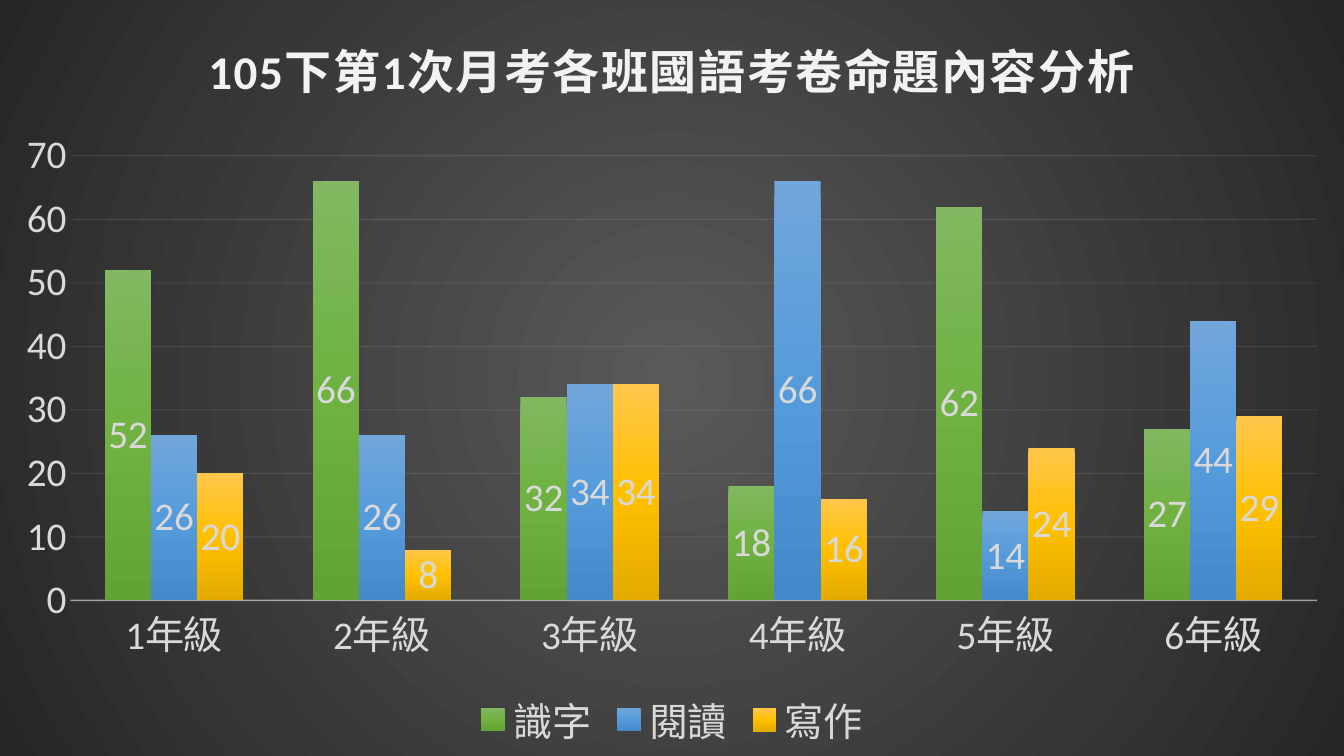
"""Build a slide with a column chart of exam content by school grade."""
from lxml.etree import SubElement
from pptx import Presentation
from pptx.chart.data import CategoryChartData
from pptx.dml.color import RGBColor
from pptx.enum.chart import XL_CHART_TYPE as ChartType
from pptx.enum.chart import XL_LABEL_POSITION as LabelPosition
from pptx.enum.chart import XL_LEGEND_POSITION as LegendPosition
from pptx.enum.chart import XL_TICK_MARK as TickMark
from pptx.oxml import parse_xml
from pptx.oxml.ns import nsdecls, qn
from pptx.util import Inches, Pt

TITLE = "105下第1次月考各班國語考卷命題內容分析"
GRADES = [f"{grade}年級" for grade in range(1, 7)]
FONT = "Calibri"
TEXT_GRAY = RGBColor(0xD9, 0xD9, 0xD9)
LIGHT_GRAY = RGBColor(0xF2, 0xF2, 0xF2)
BACKDROP = (RGBColor(0x59, 0x59, 0x59), RGBColor(0x26, 0x26, 0x26))
GREENS = (RGBColor(0x81, 0xB8, 0x61), RGBColor(0x6F, 0xB2, 0x42), RGBColor(0x62, 0xA3, 0x36))
BLUES = (RGBColor(0x71, 0xA6, 0xDB), RGBColor(0x55, 0x9B, 0xDB), RGBColor(0x44, 0x8A, 0xCA))
GOLDS = (RGBColor(0xFF, 0xC6, 0x4B), RGBColor(0xFF, 0xC0, 0x00), RGBColor(0xE3, 0xAB, 0x00))
SKILLS = [
    ("識字", (52, 66, 32, 18, 62, 27), GREENS),
    ("閱讀", (26, 26, 34, 66, 14, 44), BLUES),
    ("寫作", (20, 8, 34, 16, 24, 29), GOLDS),
]
DOWNWARD = '<a:lin ang="5400000" scaled="0"/>'
CIRCULAR = '<a:path path="circle"><a:fillToRect l="50000" t="50000" r="50000" b="50000"/></a:path>'


def gradient(colors, direction):
    """Return the XML of a gradient with evenly spaced stops."""
    step = 100000 // (len(colors) - 1)
    stops = "".join(
        f'<a:gs pos="{index * step}"><a:srgbClr val="{color}"/></a:gs>'
        for index, color in enumerate(colors)
    )
    return f'<a:gradFill {nsdecls("a")} rotWithShape="1"><a:gsLst>{stops}</a:gsLst>{direction}</a:gradFill>'


def style_font(font, size=28, color=TEXT_GRAY, bold=False):
    """Set the typeface, size, colour and weight of a font."""
    font.name = FONT
    font.size = Pt(size)
    font.bold = bold
    font.color.rgb = color


def style_line(owner, width, opacity):
    """Draw a light, partly transparent line on an axis or its gridlines."""
    line = owner.format.line
    line.width = Pt(width)
    line.color.rgb = LIGHT_GRAY
    color = line._get_or_add_ln().find(".//" + qn("a:srgbClr"))
    SubElement(color, qn("a:alpha"), val=str(opacity * 1000))


def style_title(chart):
    """Write the chart title in spaced bold type."""
    chart.has_title = True
    chart.chart_title.include_in_layout = False
    para = chart.chart_title.text_frame.paragraphs[0]
    para.text = TITLE
    span = para.runs[0]
    style_font(span.font, 33.6, LIGHT_GRAY, True)
    span.font._element.set("spc", "100")


def style_axes(chart):
    """Format both axes and the gridlines."""
    for axis in (chart.category_axis, chart.value_axis):
        axis.major_tick_mark = TickMark.NONE
        axis.minor_tick_mark = TickMark.NONE
        style_font(axis.tick_labels.font)
    style_line(chart.category_axis, 1, 54)
    values = chart.value_axis
    values.minimum_scale, values.maximum_scale, values.major_unit = 0, 70, 10
    values.format.line.fill.background()
    style_line(values.major_gridlines, 0.75, 10)


def style_series(series, colors):
    """Fill the columns of one skill and label their values."""
    series._element.get_or_add_spPr().insert(0, parse_xml(gradient(colors, DOWNWARD)))
    labels = series.data_labels
    labels.show_value = True
    labels.position = LabelPosition.CENTER
    style_font(labels.font)


def style_backdrop(chart):
    """Give the whole chart area a circular gradient without a border."""
    fill = gradient(BACKDROP, CIRCULAR)
    area = f'<c:spPr {nsdecls("c", "a")}>{fill}<a:ln><a:noFill/></a:ln></c:spPr>'
    chart._chartSpace.find(qn("c:chart")).addnext(parse_xml(area))


def add_exam_chart(page, width, height):
    """Add the clustered column chart over the whole page."""
    data = CategoryChartData()
    data.categories = GRADES
    for name, values, _ in SKILLS:
        data.add_series(name, values)
    frame = page.shapes.add_chart(
        ChartType.COLUMN_CLUSTERED, Inches(0), Inches(0), width, height, data
    )
    chart = frame.chart
    style_font(chart.font)
    style_title(chart)
    style_axes(chart)
    plot = chart.plots[0]
    plot.gap_width, plot.overlap, plot.vary_by_categories = 150, 0, False
    for series, (_, _, colors) in zip(plot.series, SKILLS):
        style_series(series, colors)
    chart.has_legend = True
    chart.legend.position = LegendPosition.BOTTOM
    chart.legend.include_in_layout = False
    style_font(chart.legend.font)
    style_backdrop(chart)


def main():
    """Create the deck and save it."""
    deck = Presentation()
    deck.slide_width, deck.slide_height = Inches(13.33), Inches(7.5)
    page = deck.slides.add_slide(deck.slide_layouts[6])
    add_exam_chart(page, deck.slide_width, deck.slide_height)
    deck.save("out.pptx")


if __name__ == "__main__":
    main()
